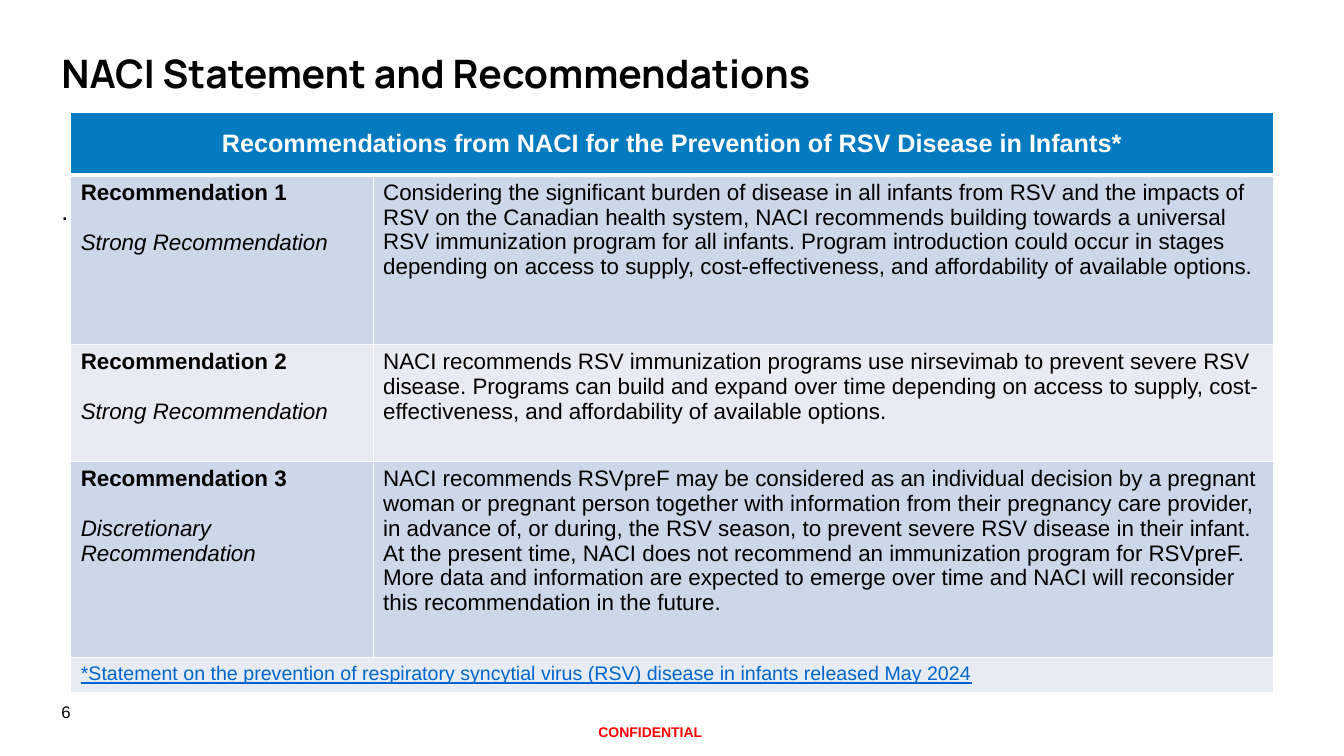
from lxml import etree
from pptx import Presentation
from pptx.dml.color import RGBColor
from pptx.enum.text import MSO_ANCHOR, PP_ALIGN
from pptx.oxml.ns import qn
from pptx.util import Pt

LEFT, CENTER = PP_ALIGN.LEFT, PP_ALIGN.CENTER
TOP, MIDDLE = MSO_ANCHOR.TOP, MSO_ANCHOR.MIDDLE
TITLE_ONLY = 5

BLACK, WHITE, RED = "000000", "FFFFFF", "FF0000"
HEADER_BLUE, LINK_BLUE = "047BC1", "0066CC"
BANDS = ["CCD7E9", "E7ECF4"]

TITLE = "NACI Statement and Recommendations"
HEADER = "Recommendations from NACI for the Prevention of RSV Disease in Infants*"
RECOMMENDATIONS = [
    ("Recommendation 1", "Strong Recommendation",
     "Considering the significant burden of disease in all infants from RSV and the "
     "impacts of RSV on the Canadian health system, NACI recommends building towards a "
     "universal RSV immunization program for all infants. Program introduction could "
     "occur in stages depending on access to supply, cost-effectiveness, and "
     "affordability of available options."),
    ("Recommendation 2", "Strong Recommendation",
     "NACI recommends RSV immunization programs use nirsevimab to prevent severe RSV "
     "disease. Programs can build and expand over time depending on access to supply, "
     "cost-effectiveness, and affordability of available options."),
    ("Recommendation 3", "Discretionary Recommendation",
     "NACI recommends RSVpreF may be considered as an individual decision by a pregnant "
     "woman or pregnant person together with information from their pregnancy care "
     "provider, in advance of, or during, the RSV season, to prevent severe RSV disease "
     "in their infant. At the present time, NACI does not recommend an immunization "
     "program for RSVpreF. More data and information are expected to emerge over time "
     "and NACI will reconsider this recommendation in the future."),
]
SOURCE = ("*Statement on the prevention of respiratory syncytial virus (RSV) disease "
          "in infants released May 2024")

COLUMN_WIDTHS = [216, 643]
ROW_HEIGHTS = [45, 121, 83.5, 140.5, 24.5]
TABLE_LEFT, TABLE_TOP = 50.5, 80

# text, left, top, width, height, size, colour, bold, alignment, anchor
LABELS = [
    (".", 36.7, 136, 891, 215, 18, BLACK, False, LEFT, TOP),
    ("6", 36.7, 494, 54, 28.8, 12, BLACK, False, LEFT, MIDDLE),
    ("CONFIDENTIAL", 313, 513.5, 303, 19.4, 10, RED, True, CENTER, TOP),
]


def rgb(color):
    return RGBColor.from_string(color)


def style(para, size, color=BLACK, bold=False, italic=False, align=LEFT, name="Arial"):
    para.alignment = align
    font = para.font
    font.name, font.size, font.bold, font.italic = name, Pt(size), bold, italic
    font.color.rgb = rgb(color)


def format_cell(cell, fill, bottom=1):
    """Draw white borders, then fill the cell."""
    properties = cell._tc.get_or_add_tcPr()
    for side, width in (("L", 1), ("R", 1), ("T", 1), ("B", bottom)):
        line = etree.SubElement(properties, qn(f"a:ln{side}"), w=str(Pt(width)))
        solid = etree.SubElement(line, qn("a:solidFill"))
        etree.SubElement(solid, qn("a:srgbClr"), val=WHITE)
    cell.fill.solid()
    cell.fill.fore_color.rgb = rgb(fill)


def add_label(page, text, left, top, width, height, size, color, bold, align, anchor):
    box = page.shapes.add_textbox(Pt(left), Pt(top), Pt(width), Pt(height))
    frame = box.text_frame
    frame.word_wrap, frame.vertical_anchor = True, anchor
    frame.text = text
    style(frame.paragraphs[0], size, color, bold, align=align)


def add_recommendations(page):
    frame = page.shapes.add_table(
        len(ROW_HEIGHTS), len(COLUMN_WIDTHS), Pt(TABLE_LEFT), Pt(TABLE_TOP),
        Pt(sum(COLUMN_WIDTHS)), Pt(sum(ROW_HEIGHTS)))
    table = frame.table
    for column, width in zip(table.columns, COLUMN_WIDTHS):
        column.width = Pt(width)
    for row, height in zip(table.rows, ROW_HEIGHTS):
        row.height = Pt(height)

    last = len(ROW_HEIGHTS) - 1
    for index, row in enumerate(table.rows):
        fill = BANDS[(index - 1) % 2] if index else HEADER_BLUE
        for cell in row.cells:
            format_cell(cell, fill, bottom=1 if index else 3)
    for index in (0, last):
        table.cell(index, 0).merge(table.cell(index, 1))

    header = table.cell(0, 0)
    header.text, header.vertical_anchor = HEADER, MIDDLE
    style(header.text_frame.paragraphs[0], 18, WHITE, bold=True, align=CENTER)

    for index, (name, strength, advice) in enumerate(RECOMMENDATIONS, 1):
        label, detail = table.cell(index, 0), table.cell(index, 1)
        label.text, detail.text = f"{name}\n{strength}", advice
        name_para, strength_para = label.text_frame.paragraphs
        style(name_para, 16, bold=True)
        style(strength_para, 16, italic=True)
        strength_para.space_before = Pt(18)
        style(detail.text_frame.paragraphs[0], 16)

    source = table.cell(last, 0)
    source.text = SOURCE
    para = source.text_frame.paragraphs[0]
    style(para, 14, LINK_BLUE)
    para.font.underline = True


def main():
    deck = Presentation()
    deck.slide_width, deck.slide_height = Pt(960), Pt(540)
    page = deck.slides.add_slide(deck.slide_layouts[TITLE_ONLY])

    title = page.shapes.title
    title.left, title.top, title.width, title.height = Pt(36.7), Pt(20), Pt(869), Pt(68.4)
    title.text_frame.text = TITLE
    title.text_frame.vertical_anchor = MIDDLE
    para = title.text_frame.paragraphs[0]
    style(para, 28, bold=True, name="Manrope")
    para.line_spacing = 0.9

    add_recommendations(page)
    for label in LABELS:
        add_label(page, *label)
    deck.save("out.pptx")


if __name__ == "__main__":
    main()
